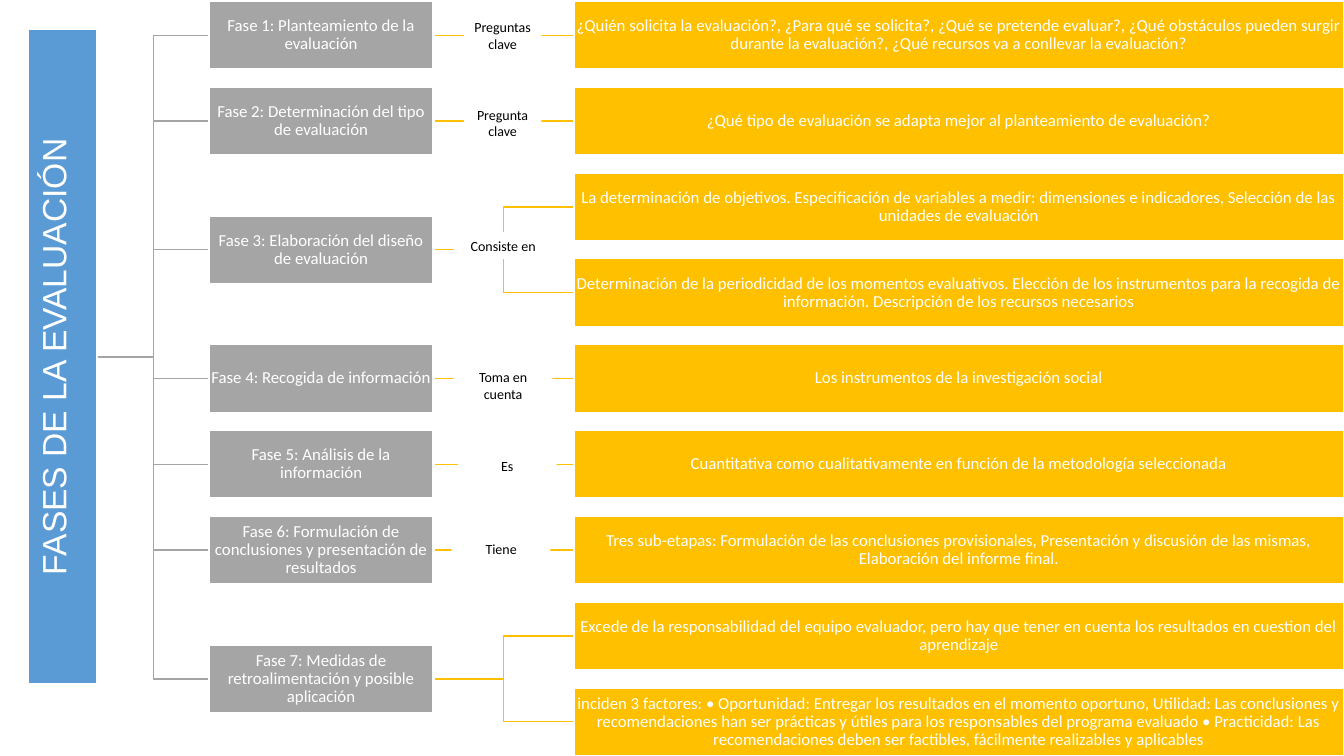
from dataclasses import dataclass

from lxml import etree
from pptx import Presentation
from pptx.dml.color import RGBColor
from pptx.enum.shapes import MSO_CONNECTOR, MSO_SHAPE
from pptx.enum.text import MSO_ANCHOR, MSO_AUTO_SIZE, PP_ALIGN
from pptx.oxml.ns import qn
from pptx.util import Inches, Pt

STRAIGHT, ELBOW = MSO_CONNECTOR.STRAIGHT, MSO_CONNECTOR.ELBOW
RECTANGLE = MSO_SHAPE.RECTANGLE
MIDDLE, CENTER = MSO_ANCHOR.MIDDLE, PP_ALIGN.CENTER
NO_AUTOFIT, GROW = MSO_AUTO_SIZE.NONE, MSO_AUTO_SIZE.SHAPE_TO_FIT_TEXT
LEFT_SIDE, RIGHT_SIDE = 1, 3

TITLE = "FASES DE LA EVALUACIÓN"

# Phase, details
PHASES = [
    ("Fase 1: Planteamiento de la evaluación",
     ["¿Quién solicita la evaluación?, ¿Para qué se solicita?, ¿Qué se pretende evaluar?, "
      "¿Qué obstáculos pueden surgir durante la evaluación?, ¿Qué recursos va a conllevar "
      "la evaluación?"]),
    ("Fase 2: Determinación del tipo de evaluación",
     ["¿Qué tipo de evaluación se adapta mejor al planteamiento de evaluación?"]),
    ("Fase 3: Elaboración del diseño de evaluación",
     ["La determinación de objetivos. Especificación de variables a medir: dimensiones e "
      "indicadores, Selección de las unidades de evaluación",
      "Determinación de la periodicidad de los momentos evaluativos. Elección de los "
      "instrumentos para la recogida de información. Descripción de los recursos necesarios"]),
    ("Fase 4: Recogida de información",
     ["Los instrumentos de la investigación social"]),
    ("Fase 5: Análisis de la información",
     ["Cuantitativa como cualitativamente en función de la metodología seleccionada"]),
    ("Fase 6: Formulación de conclusiones y presentación de resultados",
     ["Tres sub-etapas: Formulación de las conclusiones provisionales, Presentación y "
      "discusión de las mismas, Elaboración del informe final."]),
    ("Fase 7: Medidas de retroalimentación y posible aplicación",
     ["Excede de la responsabilidad del equipo evaluador, pero hay que tener en cuenta los "
      "resultados en cuestion del aprendizaje",
      "inciden 3 factores: • Oportunidad: Entregar los resultados en el momento oportuno, "
      "Utilidad: Las conclusiones y recomendaciones han ser prácticas y útiles para los "
      "responsables del programa evaluado • Practicidad: Las recomendaciones deben ser "
      "factibles, fácilmente realizables y aplicables"]),
]

# Link words with left, top, width, height in inches
LINK_WORDS = [
    ("Preguntas clave", (4.6, 0.13, 0.77, 0.44)),
    ("Pregunta clave", (4.6, 1.0, 0.77, 0.44)),
    ("Consiste en", (4.5, 2.3, 0.98, 0.27)),
    ("Toma en cuenta", (4.5, 3.6, 0.98, 0.44)),
    ("Es", (4.54, 4.49, 0.98, 0.27)),
    ("Tiene", (4.48, 5.31, 0.98, 0.27)),
]


@dataclass(frozen=True)
class Theme:
    title_fill: RGBColor = RGBColor(0x5B, 0x9B, 0xD5)
    phase: RGBColor = RGBColor(0xA5, 0xA5, 0xA5)
    detail: RGBColor = RGBColor(0xFF, 0xC0, 0x00)
    white: RGBColor = RGBColor(0xFF, 0xFF, 0xFF)
    black: RGBColor = RGBColor(0x00, 0x00, 0x00)
    title_font: str = "Arial"
    body_font: str = "Calibri"
    title_size: int = 24
    body_size: int = 12
    link_size: int = 10
    border: float = 1.5
    branch: float = 1


THEME = Theme()
ROW_TOP, ROW_PITCH, BOX_HEIGHT = 0.01, 6.81 / 8, 0.68
PHASE_LEFT, PHASE_WIDTH = 2.07, 2.23
DETAIL_LEFT, DETAIL_WIDTH = 5.69, 7.64
TRUNK_X, TRUNK_Y = 0.97, 3.54


def write(shape, text, font, size, color):
    shape.text_frame.word_wrap = True
    shape.text_frame.vertical_anchor = MIDDLE
    paragraph = shape.text_frame.paragraphs[0]
    paragraph.alignment = CENTER
    run = paragraph.add_run()
    run.text = text
    run.font.name, run.font.size = font, Pt(size)
    run.font.color.rgb = color
    return paragraph


def paint(shape, fill):
    shape.fill.solid()
    shape.fill.fore_color.rgb = fill
    shape.line.color.rgb = THEME.white
    shape.line.width = Pt(THEME.border)


def set_margins(shape, margin):
    frame = shape.text_frame
    frame.margin_left = frame.margin_right = Inches(margin)
    frame.margin_top = frame.margin_bottom = Inches(margin)


def add_rectangle(slide, *frame):
    rectangle = slide.shapes.add_shape(RECTANGLE, *map(Inches, frame))
    rectangle.shadow.inherit = False
    return rectangle


def add_box(slide, text, left, top, width, fill):
    box = add_rectangle(slide, left, top, width, BOX_HEIGHT)
    paint(box, fill)
    set_margins(box, 0.01)
    write(box, text, THEME.body_font, THEME.body_size, THEME.white).line_spacing = 0.9
    return box


def add_branch(slide, start, end, color):
    kind = STRAIGHT if abs(start[1] - end[1]) < 0.01 else ELBOW
    branch = slide.shapes.add_connector(kind, *map(Inches, start + end))
    branch.line.color.rgb = color
    branch.line.width = Pt(THEME.branch)
    etree.SubElement(branch.element.spPr, qn("a:effectLst"))
    return branch


def add_title(slide):
    title = slide.shapes.title
    title.left, title.top = Inches(-2.63), Inches(3.2)
    title.width, title.height = Inches(6.5), Inches(BOX_HEIGHT)
    title.rotation = 270
    paint(title, THEME.title_fill)
    title.text_frame.auto_size = NO_AUTOFIT
    set_margins(title, 0.02)
    title.text_frame.margin_bottom = Inches(0.21)
    write(title, TITLE, THEME.title_font, THEME.title_size, THEME.white)


def add_phase(slide, phase, details, first_row):
    """Draw the lines first, so that the boxes lie over their ends."""
    tops = [ROW_TOP + ROW_PITCH * (first_row + i) for i in range(len(details))]
    phase_top = sum(tops) / len(tops)
    phase_middle = phase_top + BOX_HEIGHT / 2
    trunk = add_branch(slide, (TRUNK_X, TRUNK_Y), (PHASE_LEFT, phase_middle), THEME.phase)
    branches = [
        add_branch(slide, (PHASE_LEFT + PHASE_WIDTH, phase_middle),
                   (DETAIL_LEFT, top + BOX_HEIGHT / 2), THEME.detail)
        for top in tops
    ]
    phase_box = add_box(slide, phase, PHASE_LEFT, phase_top, PHASE_WIDTH, THEME.phase)
    trunk.end_connect(phase_box, LEFT_SIDE)
    for detail, top, branch in zip(details, tops, branches):
        detail_box = add_box(slide, detail, DETAIL_LEFT, top, DETAIL_WIDTH, THEME.detail)
        branch.begin_connect(phase_box, RIGHT_SIDE)
        branch.end_connect(detail_box, LEFT_SIDE)


def add_link_word(slide, words, frame):
    link = add_rectangle(slide, *frame)
    link.fill.solid()
    link.fill.fore_color.rgb = THEME.white
    link.line.fill.background()
    link.text_frame.auto_size = GROW
    write(link, words, THEME.body_font, THEME.link_size, THEME.black)


def main():
    deck = Presentation()
    deck.slide_width, deck.slide_height = Inches(13.33), Inches(7.5)
    slide = deck.slides.add_slide(deck.slide_layouts.get_by_name("Title Only"))
    add_title(slide)
    row = 0
    for phase, details in PHASES:
        add_phase(slide, phase, details, row)
        row += len(details)
    for words, frame in LINK_WORDS:
        add_link_word(slide, words, frame)
    deck.save("out.pptx")


if __name__ == "__main__":
    main()
